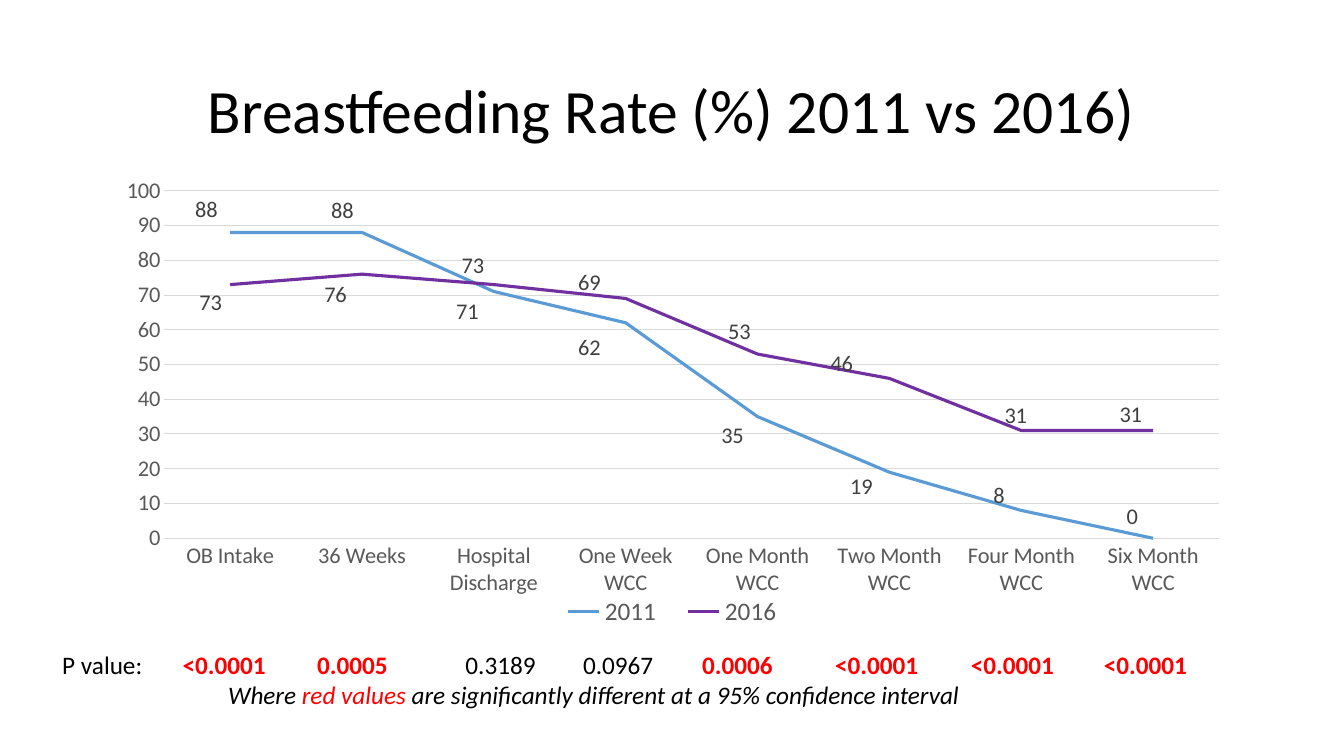
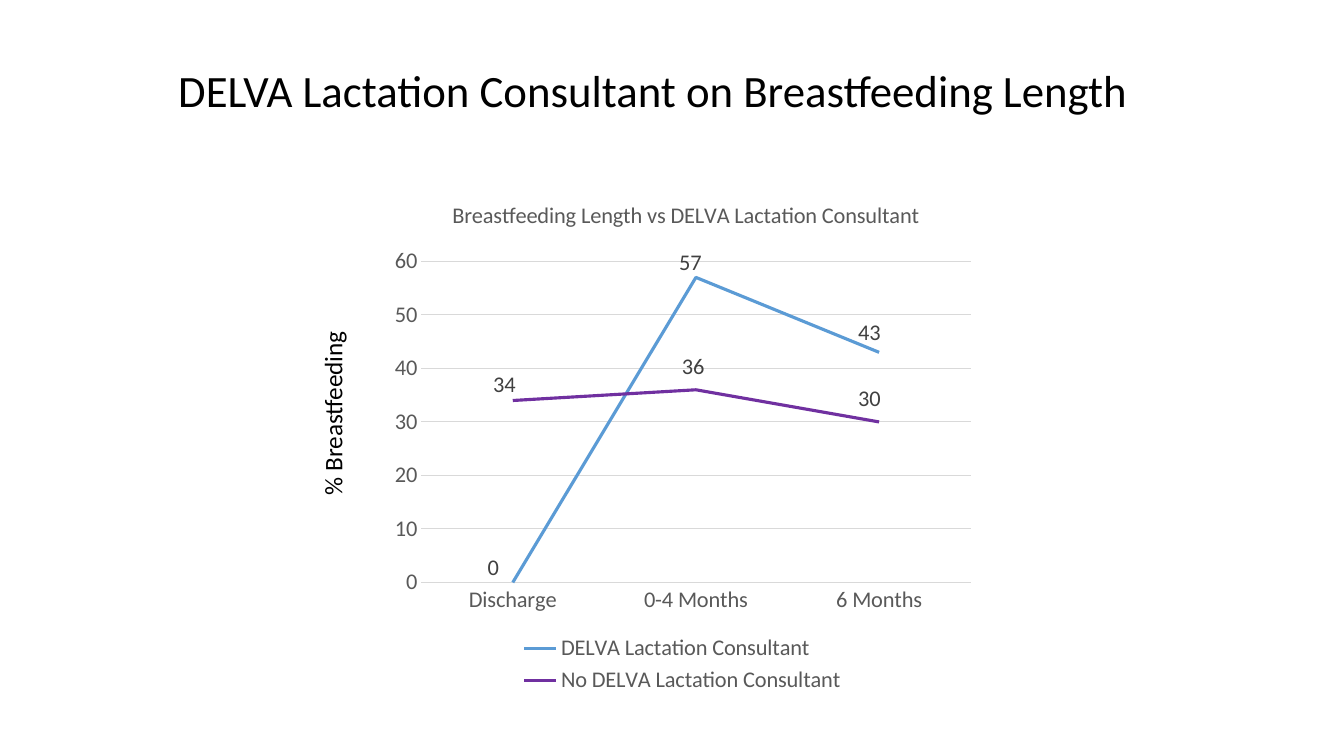
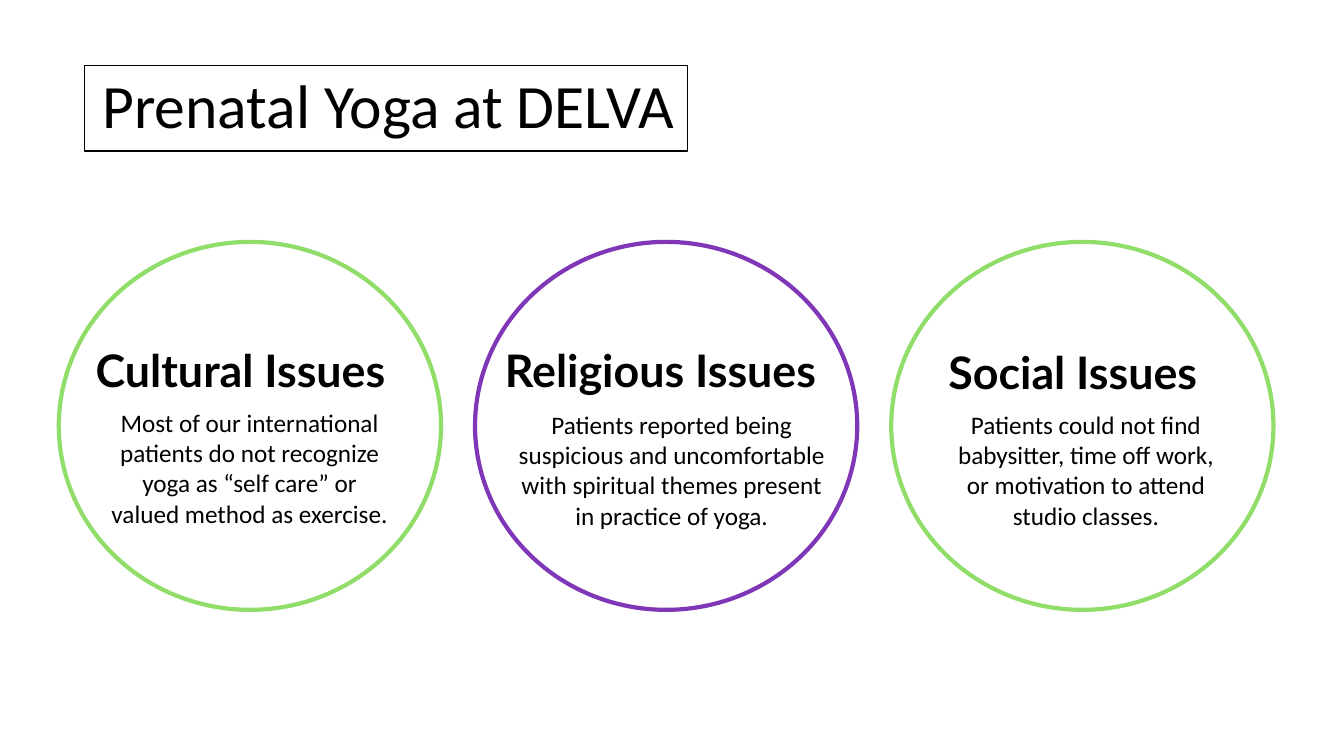
"""Build three slides on breastfeeding rates, lactation support and prenatal yoga."""
from lxml.etree import SubElement
from pptx import Presentation
from pptx.chart.data import CategoryChartData
from pptx.dml.color import RGBColor
from pptx.enum.chart import XL_CHART_TYPE, XL_LABEL_POSITION, XL_LEGEND_POSITION, XL_TICK_MARK
from pptx.enum.shapes import MSO_SHAPE
from pptx.enum.text import MSO_ANCHOR, MSO_AUTO_SIZE, PP_ALIGN
from pptx.oxml import parse_xml
from pptx.oxml.ns import nsdecls, qn
from pptx.util import Pt

BLACK = RGBColor(0x00, 0x00, 0x00)
RED = RGBColor(0xFF, 0x00, 0x00)
BLUE = RGBColor(0x5B, 0x9B, 0xD5)
PURPLE = RGBColor(0x70, 0x30, 0xA0)
VIOLET = RGBColor(0x80, 0x37, 0xB7)
GREEN = RGBColor(0x90, 0xDD, 0x69)
GREY = RGBColor(0x59, 0x59, 0x59)
DARK = RGBColor(0x40, 0x40, 0x40)
PALE = RGBColor(0xD9, 0xD9, 0xD9)
FACE = "Calibri"
CLINIC = "DELVA"
LEFT, MID = PP_ALIGN.LEFT, PP_ALIGN.CENTER


def style(font, size, color, bold=False, name=FACE):
    font.name, font.size, font.bold = name, Pt(size), bold
    font.color.rgb = color


def place(parent, index, mode, **parts):
    for old in parent.findall(qn("c:layout")):
        parent.remove(old)
    layout = parse_xml(f"<c:layout {nsdecls('c')}><c:manualLayout/></c:layout>")
    manual = layout[0]
    if mode == "inner":
        SubElement(manual, qn("c:layoutTarget")).set("val", "inner")
    if mode != "offset":
        for tag in ("c:xMode", "c:yMode"):
            SubElement(manual, qn(tag)).set("val", "edge")
    for key, val in parts.items():
        SubElement(manual, qn("c:" + key)).set("val", str(val))
    parent.insert(index, layout)


deck = Presentation()
deck.slide_width, deck.slide_height = Pt(960), Pt(540)

heads = [
    ("Breastfeeding Rate (%) 2011 vs 2016)", 66, 29, 44, MID),
    (f"{CLINIC} Lactation Consultant on Breastfeeding Length", 52.5, 14.5, 32, MID),
    (f"Prenatal Yoga at {CLINIC}", 66, 25, 44, LEFT),
]
slides = []
for words, x, y, size, align in heads:
    slide = deck.slides.add_slide(deck.slide_layouts[5])
    title = slide.shapes.title
    title.left, title.top, title.width, title.height = Pt(x), Pt(y), Pt(828), Pt(104.4)
    frame = title.text_frame
    frame.auto_size = MSO_AUTO_SIZE.NONE
    frame.vertical_anchor = MSO_ANCHOR.MIDDLE
    para = frame.paragraphs[0]
    para.alignment, para.line_spacing = align, 0.9
    run = para.add_run()
    run.text = words
    style(run.font, size, BLACK)
    slides.append(slide)
rates, length, yoga = slides

charts = [
    {
        "slide": rates, "box": (66, 85.7, 828, 369.4), "top": 100, "key": 18, "title": None,
        "plot": {"x": 0.062, "y": 0.137, "w": 0.91, "h": 0.672},
        "legend": {"x": 0.39, "y": 0.92, "w": 0.22, "h": 0.06},
        "cats": ["OB Intake", "36 Weeks", "Hospital Discharge", "One Week WCC",
                 "One Month WCC", "Two Month WCC", "Four Month WCC", "Six Month WCC"],
        "rows": [
            ("2011", BLUE, [88, 88, 71, 62, 35, 19, 8, 0],
             [(-17, -16), (-14, -15), (-19, 15), (-26, 18),
              (-18, 14), (-20, 11), (-16, -10), (-15, -15)]),
            ("2016", PURPLE, [73, 76, 73, 69, 53, 46, 31, 31],
             [(-14, 13), (-19, 15), (-15, -13), (-26, -11),
              (-13, -16), (-34, -10), (-4, -10), (-16, -11)]),
        ],
    },
    {
        "slide": length, "box": (273, 129, 429, 370), "top": 60, "key": 16,
        "title": f"Breastfeeding Length vs {CLINIC} Lactation Consultant",
        "plot": {"x": 0.065, "y": 0.156, "w": 0.915, "h": 0.62},
        "legend": None,
        "cats": ["Discharge", "0-4 Months", "6 Months"],
        "rows": [
            (f"{CLINIC} Lactation Consultant", BLUE, [0, 57, 43],
             [(-14, -10), (-4, -10), (-7, -14)]),
            (f"No {CLINIC} Lactation Consultant", PURPLE, [34, 36, 30],
             [(-6, -11), (-2, -16), (-7, -16)]),
        ],
    },
]
for item in charts:
    data = CategoryChartData(number_format="0")
    data.categories = item["cats"]
    for name, color, vals, shifts in item["rows"]:
        data.add_series(name, vals)
    box = item["box"]
    chart = item["slide"].shapes.add_chart(
        XL_CHART_TYPE.LINE, *[Pt(v) for v in box], data).chart
    style(chart.font, 10, BLACK)
    place(chart._chartSpace.xpath("c:chart/c:plotArea")[0], 0, "inner", **item["plot"])

    chart.has_title = item["title"] is not None
    if item["title"]:
        run = chart.chart_title.text_frame.paragraphs[0].add_run()
        run.text = item["title"]
        style(run.font, 16, GREY)
        place(chart._chartSpace.xpath("c:chart/c:title")[0], 1, "edge", x=0.11, y=0.03)

    chart.has_legend = True
    chart.legend.position = XL_LEGEND_POSITION.BOTTOM
    chart.legend.include_in_layout = False
    style(chart.legend.font, item["key"], GREY)
    if item["legend"]:
        place(chart._chartSpace.xpath("c:chart/c:legend")[0], 1, "edge", **item["legend"])

    for axis in (chart.category_axis, chart.value_axis):
        axis.major_tick_mark = axis.minor_tick_mark = XL_TICK_MARK.NONE
        style(axis.tick_labels.font, 16, GREY)
    base = chart.category_axis.format.line
    base.color.rgb, base.width = PALE, Pt(0.75)
    scale = chart.value_axis
    scale.minimum_scale, scale.maximum_scale, scale.major_unit = 0, item["top"], 10
    scale.format.line.fill.background()
    grid = scale.major_gridlines.format.line
    grid.color.rgb, grid.width = PALE, Pt(0.75)

    for series, (name, color, vals, shifts) in zip(chart.plots[0].series, item["rows"]):
        series.smooth = False
        series.format.line.color.rgb = color
        series.format.line.width = Pt(2.25)
        for i, (dx, dy) in enumerate(shifts):
            label = series.points[i].data_label
            style(label.font, 16, DARK)
            label.position = XL_LABEL_POSITION.CENTER
            place(label._get_or_add_dLbl(), 1, "offset",
                  x=round(dx / box[2], 4), y=round(dy / box[3], 4))
        labels = series._element.xpath("c:dLbls")[0]
        for flag in labels.findall(qn("c:showLeaderLines")):
            flag.set("val", "0")
        labels.append(parse_xml(
            f'<c:extLst {nsdecls("c")}><c:ext uri="{{CE6537A1-D6FC-4f65-9D91-7224C49458BB}}" '
            'xmlns:c15="http://schemas.microsoft.com/office/drawing/2012/chart">'
            '<c15:showLeaderLines val="0"/></c:ext></c:extLst>'))

frame = rates.shapes.add_textbox(Pt(37.4), Pt(460), Pt(831), Pt(51)).text_frame
frame.word_wrap = True
para = frame.paragraphs[0]
run = para.add_run()
run.text = "P value:"
style(run.font, 18, BLACK)
tabs = SubElement(para._p.get_or_add_pPr(), qn("a:tabLst"))
marks = [
    ("<0.0001", 86), ("0.0005", 182), ("0.3189", 288), ("0.0967", 372),
    ("0.0006", 457), ("<0.0001", 552), ("<0.0001", 649), ("<0.0001", 744),
]
for value, stop in marks:
    tab = SubElement(tabs, qn("a:tab"))
    tab.set("pos", str(Pt(stop)))
    tab.set("algn", "l")
    strong = value not in ("0.3189", "0.0967")
    run = para.add_run()
    run.text = "\t" + value
    style(run.font, 18, RED if strong else BLACK, strong)
para = frame.add_paragraph()
para._p.get_or_add_pPr().set("marL", str(Pt(118.5)))
for words, color in [
    ("Where ", BLACK), ("red values ", RED),
    ("are significantly different at a 95% confidence interval", BLACK),
]:
    run = para.add_run()
    run.text = words
    style(run.font, 18, color)
    run.font.italic = True

outlines = [(MSO_SHAPE.RECTANGLE, 60.5, 46.8, 430.5, 61.2, BLACK, 1)]
for i, color in enumerate((GREEN, VIOLET, GREEN)):
    outlines.append((MSO_SHAPE.OVAL, 42 + 297.3 * i, 172.8, 273, 262.8, color, 3))
for kind, x, y, w, h, color, weight in outlines:
    shape = yoga.shapes.add_shape(kind, Pt(x), Pt(y), Pt(w), Pt(h))
    shape.shadow.inherit = False
    shape.fill.background()
    shape.line.color.rgb, shape.line.width = color, Pt(weight)

notes = [
    (length, "% Breastfeeding", 170.6, 279.4, 134, 29, 18, LEFT, FACE, 270),
    (yoga, "Cultural Issues", 61.2, 241.2, 234, 46, 32, LEFT, "Lato", 0),
    (yoga, "Most of our international patients do not recognize yoga as “self care” "
           "or valued method as exercise.", 70.6, 287.3, 215.3, 94.3, 18, MID, FACE, 0),
    (yoga, "Religious Issues", 353.5, 241.2, 253.4, 46, 32, LEFT, "Lato", 0),
    (yoga, "Patients reported being suspicious and uncomfortable with spiritual themes "
           "present in practice of yoga.", 357.8, 288.7, 244, 94.3, 18, MID, FACE, 0),
    (yoga, "Social Issues", 670.3, 242.6, 204.5, 46, 32, LEFT, "Lato", 0),
    (yoga, "Patients could not find babysitter, time off work, or motivation to attend "
           "studio classes.", 676, 288.7, 199.4, 94.3, 18, MID, FACE, 0),
]
for slide, words, x, y, w, h, size, align, face, turn in notes:
    shape = slide.shapes.add_textbox(Pt(x), Pt(y), Pt(w), Pt(h))
    shape.rotation = turn
    shape.text_frame.word_wrap = True
    para = shape.text_frame.paragraphs[0]
    para.alignment = align
    run = para.add_run()
    run.text = words
    style(run.font, size, BLACK, face == "Lato", face)

deck.save("out.pptx")
